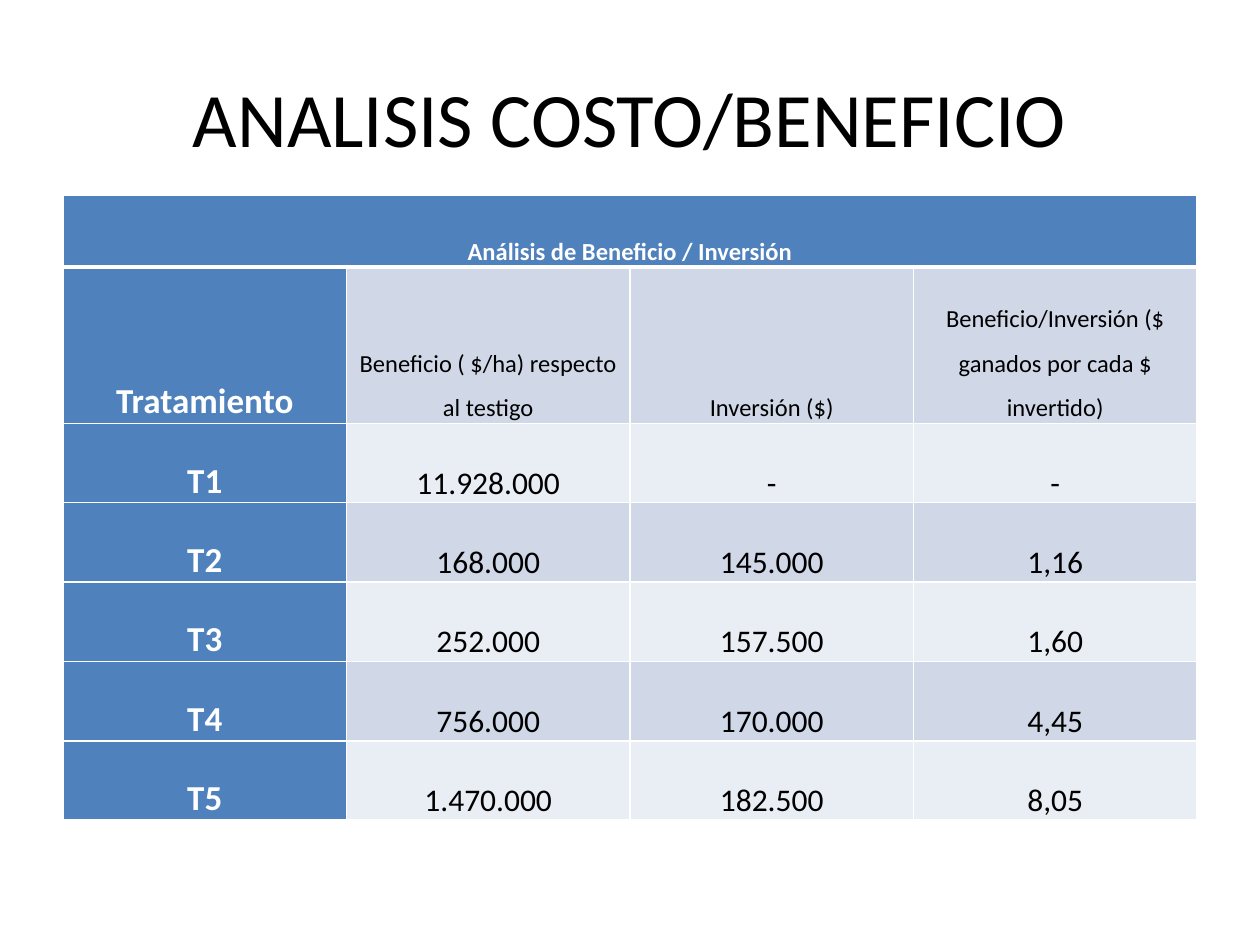
import pptx
import pptx.util
import pptx.dml.color
import pptx.enum.text
import pptx.oxml
import pptx.oxml.ns
from pptx.util import Inches

BLUE, WHITE, BLACK = "4F81BD", "FFFFFF", "000000"
BANDS = ["D0D8E8", "E9EDF4"]


def write_text(frame, text, size, color=BLACK, bold=False, spacing=1.0):
    para = frame.paragraphs[0]
    para.alignment = pptx.enum.text.PP_ALIGN.CENTER
    para.line_spacing = spacing
    span = para.add_run()
    span.text = text
    span.font.name = "Calibri"
    span.font.size = pptx.util.Pt(size)
    span.font.bold = bold
    span.font.color.rgb = pptx.dml.color.RGBColor.from_string(color)


def set_borders(cell, top=1, bottom=1):
    # Border lines come before the fill in the cell properties
    properties = cell._tc.get_or_add_tcPr()
    for place, (side, width) in enumerate(
            [("L", 1), ("R", 1), ("T", top), ("B", bottom)]):
        line = pptx.oxml.parse_xml(
            f'<a:ln{side} {pptx.oxml.ns.nsdecls("a")} w="{pptx.util.Pt(width)}">'
            f'<a:solidFill><a:srgbClr val="{WHITE}"/></a:solidFill></a:ln{side}>')
        properties.insert(place, line)


deck = pptx.Presentation()
deck.slide_width, deck.slide_height = Inches(10), Inches(7.5)
page = deck.slides.add_slide(deck.slide_layouts[5])

# Title
title = page.shapes.title
title.left, title.top = Inches(0.5), Inches(0.3)
title.width, title.height = Inches(9), Inches(1.25)
title.text_frame.vertical_anchor = pptx.enum.text.MSO_ANCHOR.MIDDLE
write_text(title.text_frame, "ANALISIS COSTO/BENEFICIO", 44)

# Table content
rows = [
    ["Análisis de Beneficio / Inversión", "", "", ""],
    ["Tratamiento", "Beneficio ( $/ha) respecto al testigo", "Inversión ($)",
     "Beneficio/Inversión ($ ganados por cada $ invertido)"],
    ["T1", "11.928.000", "-", "-"],
    ["T2", "168.000", "145.000", "1,16"],
    ["T3", "252.000", "157.500", "1,60"],
    ["T4", "756.000", "170.000", "4,45"],
    ["T5", "1.470.000", "182.500", "8,05"],
]
heights = [0.57, 1.24] + [0.63] * 5

# Table grid
table = page.shapes.add_table(
    len(rows), 4, Inches(0.5), Inches(1.55), Inches(9), Inches(sum(heights))).table
for column in table.columns:
    column.width = Inches(2.25)
for row, height in zip(table.rows, heights):
    row.height = Inches(height)
table.cell(0, 0).merge(table.cell(0, 3))

# Table cells: blue heading row and first column, banded body
for r, texts in enumerate(rows):
    for c, text in enumerate(texts):
        cell = table.cell(r, c)
        heading = r == 0 or c == 0
        cell.fill.solid()
        cell.fill.fore_color.rgb = pptx.dml.color.RGBColor.from_string(
            BLUE if heading else BANDS[(r - 1) % 2])
        set_borders(cell, top=3 if r == 1 else 1, bottom=3 if r == 0 else 1)
        cell.vertical_anchor = pptx.enum.text.MSO_ANCHOR.BOTTOM
        cell.margin_left = cell.margin_right = Inches(0.05)
        cell.margin_top = cell.margin_bottom = 0
        if text:
            size = 14 if r == 0 else 20 if c == 0 else 14 if r == 1 else 18
            write_text(cell.text_frame, text, size, WHITE if heading else BLACK,
                       bold=heading, spacing=1.5)

deck.save("out.pptx")
